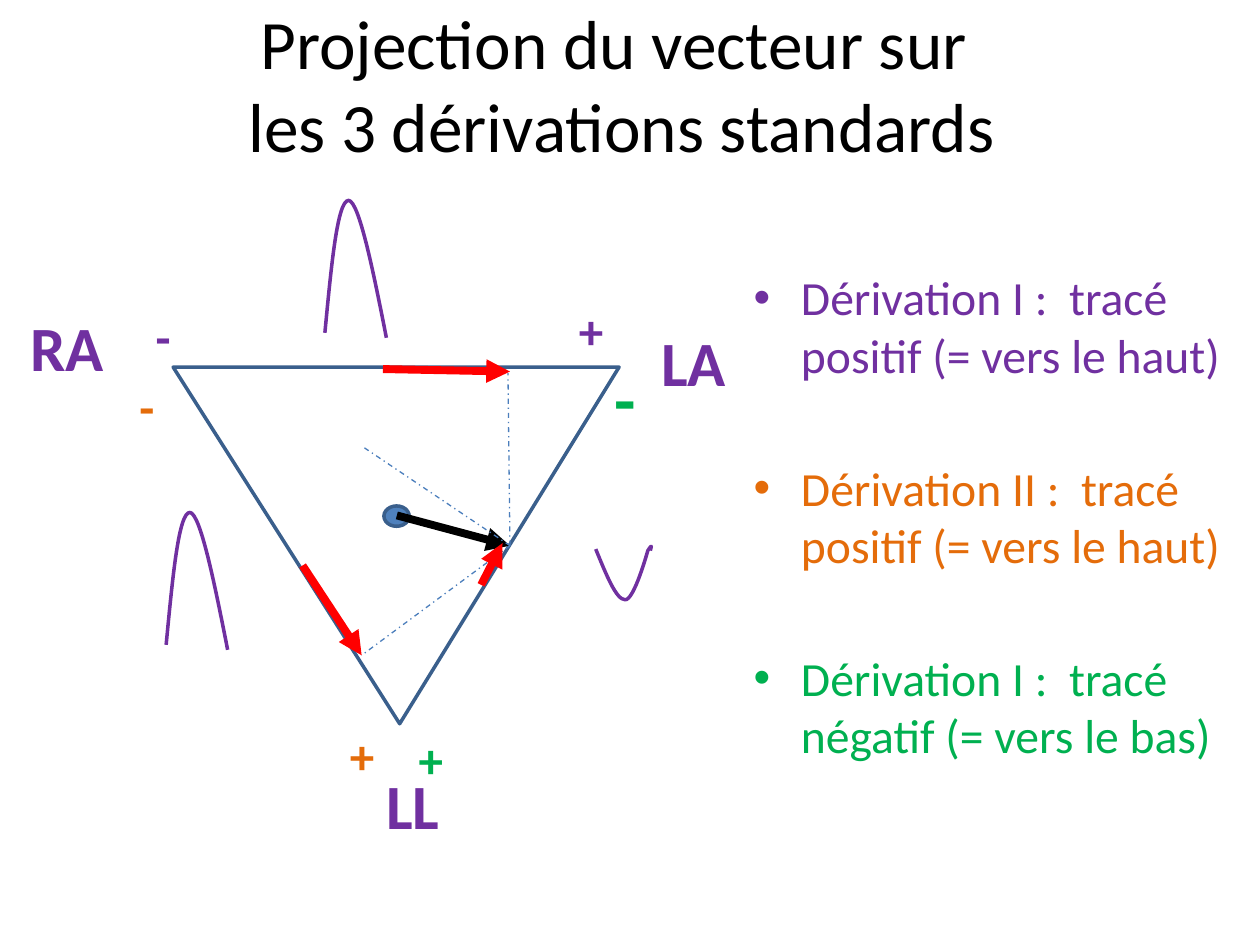
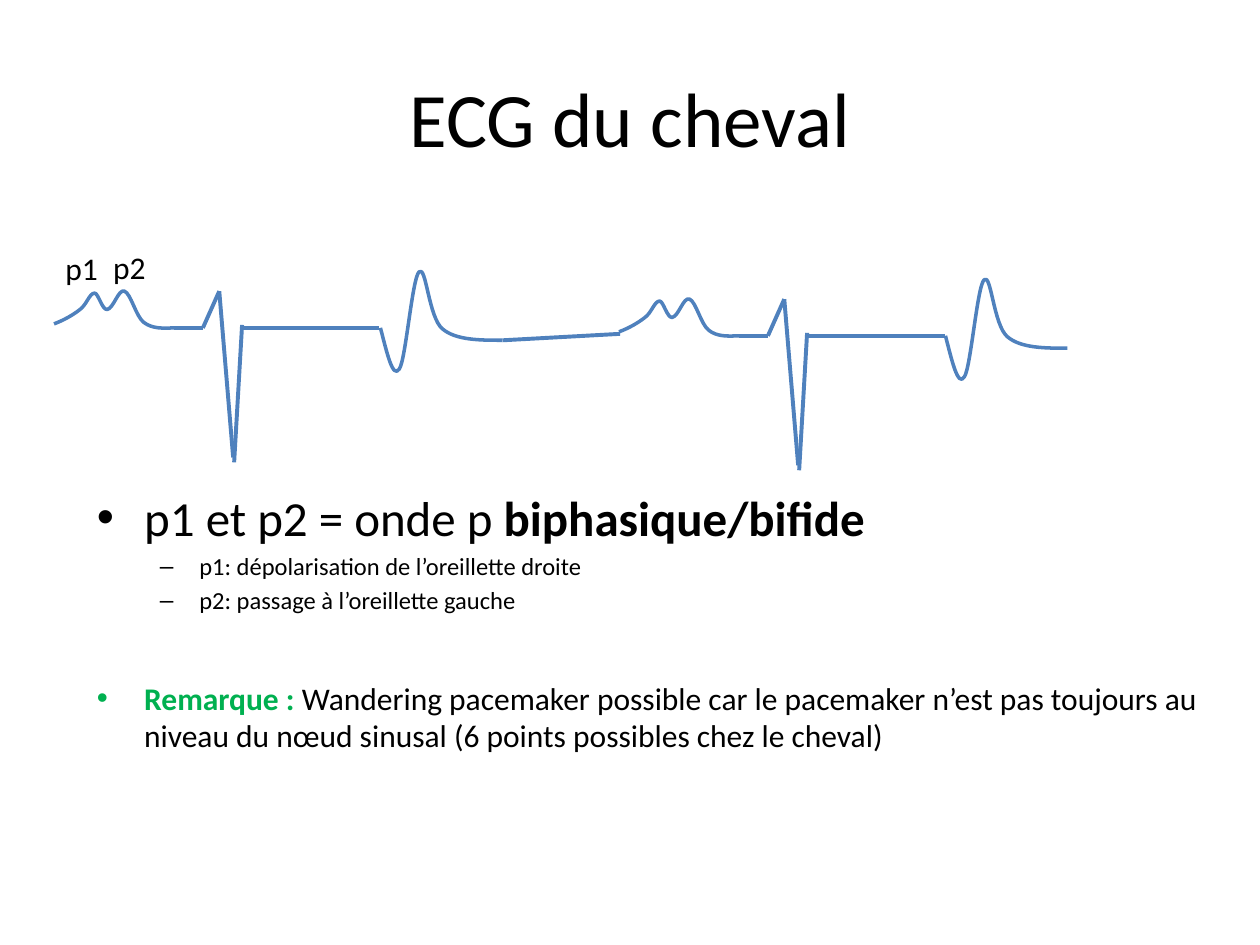
from dataclasses import dataclass

from pptx import Presentation
from pptx.dml.color import RGBColor as Rgb
from pptx.enum.dml import MSO_LINE_DASH_STYLE as Dash
from pptx.enum.shapes import MSO_CONNECTOR as Connector, MSO_SHAPE as Shape
from pptx.enum.text import MSO_ANCHOR as Anchor, MSO_AUTO_SIZE as AutoSize, PP_ALIGN as Align
from pptx.oxml.ns import qn
from pptx.util import Cm, Pt
from lxml.etree import SubElement


@dataclass(frozen=True)
class Theme:
    font: str = "Calibri"
    black: str = "000000"
    red: str = "FF0000"
    purple: str = "7030A0"
    orange: str = "E46C0A"
    green: str = "00B050"
    blue: str = "4F81BD"
    outline: str = "3A5F8C"
    projection: str = "4B7EBC"
    title: float = 44
    title_two_lines: float = 39.6
    electrode: float = 36
    big_sign: float = 40
    sign: float = 28
    lead: float = 27.2
    point: float = 28
    detail: float = 14
    note: float = 18


THEME = Theme()

# Curves: a start point, then two control points and an end point per segment (cm)
POSITIVE_WAVE = [(0, 0), (0.13, -1.35), (0.25, -2.67), (0.48, -2.67),
                 (0.69, -2.64), (0.97, -1.27), (1.24, 0.1)]
NEGATIVE_WAVE = [(0, 0), (0.21, 0.51), (0.41, 1.02), (0.59, 1.02),
                 (0.77, 1.05), (1.05, 0.03), (1.05, 0.03),
                 (1.15, -0.12), (1.12, -0.05), (1.1, 0.03)]
P_WAVE = [(1.09, 6.53), (1.3, 6.45), (1.47, 6.35), (1.6, 6.25),
          (1.75, 6.15), (1.8, 5.91), (1.91, 5.91),
          (1.98, 5.91), (2.06, 6.25), (2.16, 6.24),
          (2.29, 6.22), (2.39, 5.82), (2.51, 5.87),
          (2.64, 5.92), (2.74, 6.38), (2.9, 6.5),
          (3.07, 6.63), (3.28, 6.62), (3.51, 6.61)]
T_WAVE = [(7.67, 6.61), (7.8, 7.11), (7.92, 7.65), (8.05, 7.44),
          (8.18, 7.26), (8.31, 5.61), (8.45, 5.48),
          (8.59, 5.33), (8.64, 6.4), (8.92, 6.63),
          (9.19, 6.86), (9.68, 6.86), (10.13, 6.86)]
QRS_LINES = [((3.51, 6.61), (4.09, 6.61)), ((4.09, 6.61), (4.42, 5.87)),
             ((4.42, 5.87), (4.7, 9.22)), ((4.72, 9.32), (4.88, 6.55)),
             ((4.88, 6.61), (7.65, 6.61))]
BEAT_SHIFT = (11.39, 0.16)


def place(shape, left, top, width, height):
    shape.left, shape.top = Cm(left), Cm(top)
    shape.width, shape.height = Cm(width), Cm(height)


def write(paragraph, text, size, color=THEME.black, bold=False, align=None):
    """Add text to a paragraph in one format; \\v breaks the line."""
    if align is not None:
        paragraph.alignment = align
    for index, line in enumerate(text.split("\v")):
        if index:
            paragraph.add_line_break()
        run = paragraph.add_run()
        run.text = line
        run.font.name, run.font.size, run.font.bold = THEME.font, Pt(size), bold
        run.font.color.rgb = Rgb.from_string(color)


def set_title(slide, text, box, size=THEME.title, bottom=0.13):
    title = slide.shapes.title
    place(title, *box)
    frame = title.text_frame
    frame.auto_size, frame.vertical_anchor = AutoSize.NONE, Anchor.MIDDLE
    frame.margin_bottom = Cm(bottom)
    write(frame.paragraphs[0], text, size, align=Align.CENTER)


def set_list(slide, box, items, top=0.13):
    """Fill the body with items of (level, space before, runs)."""
    body = slide.placeholders[1]
    place(body, *box)
    frame = body.text_frame
    frame.auto_size, frame.margin_top = AutoSize.NONE, Cm(top)
    for index, (level, space, runs) in enumerate(items):
        paragraph = frame.add_paragraph() if index else frame.paragraphs[0]
        paragraph.level = level
        if space:
            paragraph.space_before = Pt(space)
        for text, text_format in runs:
            write(paragraph, text, **text_format)


def add_label(slide, text, box, wrap=True, **text_format):
    frame = slide.shapes.add_textbox(*map(Cm, box)).text_frame
    frame.word_wrap, frame.auto_size = wrap, AutoSize.SHAPE_TO_FIT_TEXT
    write(frame.paragraphs[0], text, **text_format)


def style_outline(shape, color):
    shape.shadow.inherit = False
    shape.fill.background()
    shape.line.color.rgb = Rgb.from_string(color)
    shape.line.width = Pt(2)


def add_preset(slide, preset, box):
    shape = slide.shapes.add_shape(preset, *map(Cm, box))
    style_outline(shape, THEME.outline)
    return shape


def add_line(slide, start, end, color, width, arrow=False, dash=None):
    line = slide.shapes.add_connector(Connector.STRAIGHT, *map(Cm, (*start, *end)))
    line.line.color.rgb = Rgb.from_string(color)
    line.line.width = Pt(width)
    if dash:
        line.line.dash_style = dash
    properties = line._element.spPr
    if arrow:
        SubElement(properties.find(qn("a:ln")), qn("a:tailEnd"), type="triangle")
    SubElement(properties, qn("a:effectLst"))


def shift(point, offset):
    return point[0] + offset[0], point[1] + offset[1]


def add_curve(slide, points, offset, color):
    """Draw an open outline through the nodes, then bend each side into a Bézier."""
    points = [tuple(map(Cm, shift(point, offset))) for point in points]
    builder = slide.shapes.build_freeform(*points[0])
    builder.add_line_segments(points[3::3], close=False)
    curve = builder.convert_to_shape()
    sides = list(curve._element.iter(qn("a:lnTo")))
    for index, side in enumerate(sides):
        side.clear()
        bend = SubElement(side.getparent(), qn("a:cubicBezTo"))
        for x, y in points[3 * index + 1:3 * index + 4]:
            SubElement(bend, qn("a:pt"), x=str(x - curve.left), y=str(y - curve.top))
        side.getparent().replace(side, bend)
    style_outline(curve, color)


def add_beat(slide, offset):
    add_curve(slide, P_WAVE, offset, THEME.blue)
    for start, end in QRS_LINES:
        add_line(slide, shift(start, offset), shift(end, offset), THEME.blue, 2.25)
    add_curve(slide, T_WAVE, offset, THEME.blue)


def build_projection_slide(slide):
    set_title(slide, "Projection du vecteur sur \vles 3 dérivations standards",
              (1.1, 0.93, 22.86, 3.18), THEME.title_two_lines, bottom=1.8)

    # Triangle and heart vector
    triangle = add_preset(slide, Shape.ISOSCELES_TRIANGLE, (3.49, 7.4, 8.99, 7.19))
    triangle.rotation = 180
    triangle.adjustments[0] = 0.492
    heart = add_preset(slide, Shape.OVAL, (7.74, 10.2, 0.51, 0.41))
    heart.fill.solid()
    heart.fill.fore_color.rgb = Rgb.from_string(THEME.blue)
    vector_tip = (10.28, 11)
    add_line(slide, (8, 10.39), vector_tip, THEME.black, 4.5, arrow=True)

    # Projections on the three sides
    for foot in ((7.29, 13.21), (10.24, 7.52), (7.29, 8.99)):
        add_line(slide, vector_tip, foot, THEME.projection, 0.75, dash=Dash.DASH_DOT)
    for start, end in (((6.1, 11.4), (7.29, 13.21)),
                       ((7.72, 7.44), (10.28, 7.49)),
                       ((9.7, 11.79), (10.13, 10.95))):
        add_line(slide, start, end, THEME.red, 4.5, arrow=True)

    # Polarity signs and electrodes
    for sign, box, color, size in (
            ("-", (2.49, 6.05, 1.6, 1.45), THEME.purple, THEME.sign),
            ("-", (2.21, 7.47, 1.5, 1.45), THEME.orange, THEME.sign),
            ("+", (6.55, 14.5, 1.5, 1.45), THEME.orange, THEME.sign),
            ("+", (7.11, 14.58, 3.15, 1.45), THEME.green, THEME.sign),
            ("+", (10.34, 5.94, 3.15, 1.45), THEME.purple, THEME.sign),
            ("-", (11.02, 7.04, 3.15, 1.96), THEME.green, THEME.big_sign)):
        add_label(slide, sign, box, size=size, color=color, bold=True, align=Align.CENTER)
    for name, box in (("RA", (0.36, 6.1, 2.01, 1.8)),
                      ("LL", (7.54, 15.32, 1.6, 1.8)),
                      ("LA", (13.08, 6.4, 1.83, 1.8))):
        add_label(slide, name, box, wrap=False, size=THEME.electrode,
                  color=THEME.purple, bold=True)

    # Recorded waves
    for wave, origin in ((POSITIVE_WAVE, (6.55, 6.71)),
                         (POSITIVE_WAVE, (3.35, 13)),
                         (NEGATIVE_WAVE, (12.01, 11.07))):
        add_curve(slide, wave, origin, THEME.purple)

    # Reading of each lead
    leads = (("Dérivation I :  tracé positif (= vers le haut)", THEME.purple),
             ("Dérivation II :  tracé positif (= vers le haut)", THEME.orange),
             ("Dérivation I :  tracé négatif (= vers le bas)", THEME.green))
    set_list(slide, (14.94, 5.28, 10.46, 11.84),
             [(0, 43.4 if index else None, [(text, dict(size=THEME.lead, color=color))])
              for index, (text, color) in enumerate(leads)])


def build_horse_slide(slide):
    set_title(slide, "ECG du cheval", (1.27, 0.76, 22.86, 3.18))

    # Explanations
    point, detail, note = (dict(size=size) for size in
                           (THEME.point, THEME.detail, THEME.note))
    set_list(slide, (1.7, 6.55, 22.86, 12.57), [
        (0, None, [("p1 et p2 = onde p ", point),
                   ("biphasique/bifide", dict(point, bold=True))]),
        (1, None, [("p1: dépolarisation de l’oreillette droite", detail)]),
        (1, None, [("p2: passage à l’oreillette gauche", detail)]),
        (0, 36.6, [("Remarque : ", dict(note, color=THEME.green, bold=True)),
                   ("Wandering pacemaker possible car le pacemaker n’est pas toujours "
                    "au niveau du nœud sinusal (6 points possibles chez le cheval)", note)]),
    ], top=3.27)

    # Two beats and the line between them
    for offset in ((0, 0), BEAT_SHIFT):
        add_beat(slide, offset)
    add_line(slide, T_WAVE[-1], (12.5, 6.73), THEME.blue, 2.25)
    add_label(slide, "p1", (1.07, 4.9, 1.68, 1.02), size=THEME.note)
    add_label(slide, "p2", (2.03, 4.88, 1.68, 1.02), size=THEME.note)


def main():
    presentation = Presentation()
    presentation.slide_width, presentation.slide_height = Cm(25.4), Cm(19.05)
    layout = presentation.slide_layouts[1]
    for build in (build_projection_slide, build_horse_slide):
        build(presentation.slides.add_slide(layout))
    presentation.save("out.pptx")


if __name__ == "__main__":
    main()
